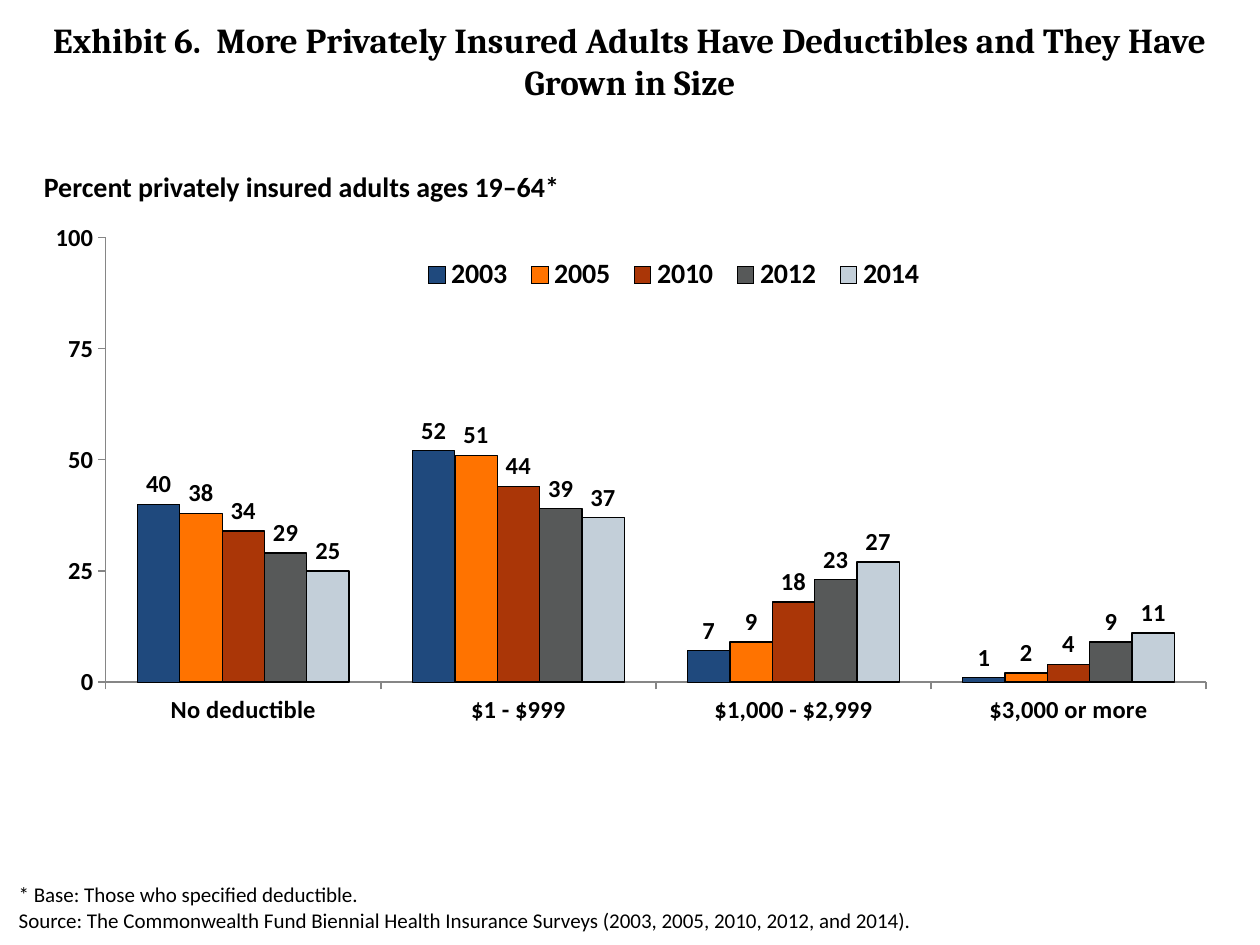
from dataclasses import dataclass

from lxml.etree import SubElement
from pptx import Presentation
from pptx.chart.data import CategoryChartData
from pptx.dml.color import RGBColor
from pptx.enum.chart import XL_CHART_TYPE, XL_LABEL_POSITION, XL_LEGEND_POSITION, XL_TICK_MARK
from pptx.enum.text import MSO_ANCHOR, PP_ALIGN
from pptx.oxml.ns import qn
from pptx.util import Inches, Pt

COLORS = {
    "text": "000000",
    "axis": "868686",
    "navy": "1F497D",
    "orange": "FF7300",
    "rust": "AA3607",
    "gray": "575959",
    "pale": "104168",
}
CATEGORIES = ["No deductible", "$1 - $999", "$1,000 - $2,999", "$3,000 or more"]


@dataclass
class Year:
    name: str
    values: tuple[int, ...]
    color: str
    line: float = 0.75
    opacity: int = 100


@dataclass
class Note:
    box: tuple[float, float, float, float]
    lines: tuple[str, ...]
    size: int
    bold: bool = False


YEARS = [
    Year("2003", (40, 52, 7, 1), "navy", line=0.5),
    Year("2005", (38, 51, 9, 2), "orange"),
    Year("2010", (34, 44, 18, 4), "rust"),
    Year("2012", (29, 39, 23, 9), "gray"),
    Year("2014", (25, 37, 27, 11), "pale", opacity=25),
]
NOTES = [
    Note((0.25, 1.3, 7.24, 0.37), ("Percent privately insured adults ages 19–64*",), 16, True),
    Note((0.05, 6.95, 8.83, 0.51), (
        "* Base: Those who specified deductible.",
        "Source: The Commonwealth Fund Biennial Health Insurance Surveys "
        "(2003, 2005, 2010, 2012, and 2014).",
    ), 12),
]


def rgb(name: str) -> RGBColor:
    return RGBColor.from_string(COLORS[name])


def set_font(font, size: int, bold: bool, name: str = "Calibri") -> None:
    font.name, font.size, font.bold = name, Pt(size), bold
    font.color.rgb = rgb("text")


def add_note(slide, note: Note) -> None:
    tf = slide.shapes.add_textbox(*map(Inches, note.box)).text_frame
    tf.word_wrap = True
    tf.text = "\n".join(note.lines)
    for p in tf.paragraphs:
        set_font(p.font, note.size, note.bold)


def set_layout(parent, x: float, y: float, w: float, h: float, inner: bool = False) -> None:
    """Place a chart part by fractions of the chart area."""
    layout = parent.find(qn("c:layout"))
    if layout is None:
        layout = SubElement(parent, qn("c:layout"))
        # The layout leads the plot area but follows the legend position
        anchor = parent.find(qn("c:legendPos"))
        parent.insert(0 if anchor is None else 1, layout)
    manual = SubElement(layout, qn("c:manualLayout"))
    settings = {"layoutTarget": "inner"} if inner else {}
    settings |= {"xMode": "edge", "yMode": "edge", "x": x, "y": y, "w": w, "h": h}
    for tag, value in settings.items():
        SubElement(manual, qn(f"c:{tag}")).set("val", str(value))


def style_series(series, year: Year) -> None:
    series.invert_if_negative = False
    fill = series.format.fill
    fill.solid()
    fill.fore_color.rgb = rgb(year.color)
    if year.opacity < 100:
        color = series._element.spPr.find(qn("a:solidFill"))[0]
        SubElement(color, qn("a:alpha")).set("val", str(year.opacity * 1000))
    series.format.line.color.rgb = rgb("text")
    series.format.line.width = Pt(year.line)
    labels = series.data_labels
    labels.show_value = True
    labels.position = XL_LABEL_POSITION.OUTSIDE_END
    set_font(labels.font, 14, True)


def add_deductible_chart(slide) -> None:
    data = CategoryChartData()
    data.categories = CATEGORIES
    for year in YEARS:
        data.add_series(year.name, year.values)
    box = map(Inches, (0.37, 1.69, 9.39, 4.9))
    chart = slide.shapes.add_chart(XL_CHART_TYPE.COLUMN_CLUSTERED, *box, data).chart
    set_font(chart.font, 14, True)
    chart.has_title = False

    # Columns
    plot = chart.plots[0]
    plot.gap_width, plot.overlap = 150, 0
    plot.vary_by_categories = False
    for series, year in zip(plot.series, YEARS):
        style_series(series, year)
    set_layout(chart._chartSpace.chart.plotArea, 0.05, 0.04, 0.93, 0.72, inner=True)

    # Axes
    value_axis = chart.value_axis
    value_axis.minimum_scale, value_axis.maximum_scale = 0, 100
    value_axis.major_unit = 25
    value_axis.has_major_gridlines = False
    for axis in (chart.category_axis, value_axis):
        axis.major_tick_mark = XL_TICK_MARK.OUTSIDE
        axis.format.line.color.rgb = rgb("axis")
        set_font(axis.tick_labels.font, 14, True)

    # Legend
    chart.has_legend = True
    legend = chart.legend
    legend.position = XL_LEGEND_POSITION.TOP
    legend.include_in_layout = False
    set_font(legend.font, 16, True)
    set_layout(legend._element, 0.31, 0.06, 0.44, 0.08)


def add_title(slide) -> None:
    title = slide.shapes.title
    title.left, title.top, title.width, title.height = map(Inches, (0, 0.1, 10, 0.77))
    tf = title.text_frame
    tf.word_wrap = True
    tf.vertical_anchor = MSO_ANCHOR.TOP
    tf.text = ("Exhibit 6.  More Privately Insured Adults Have Deductibles "
               "and They Have Grown in Size")
    p = tf.paragraphs[0]
    p.alignment = PP_ALIGN.CENTER
    set_font(p.font, 20, True, "Cambria")


def main() -> None:
    prs = Presentation()
    prs.slide_width, prs.slide_height = Inches(10), Inches(7.5)
    slide = prs.slides.add_slide(prs.slide_layouts[5])
    add_title(slide)
    for note in NOTES:
        add_note(slide, note)
    add_deductible_chart(slide)
    prs.save("out.pptx")


if __name__ == "__main__":
    main()
